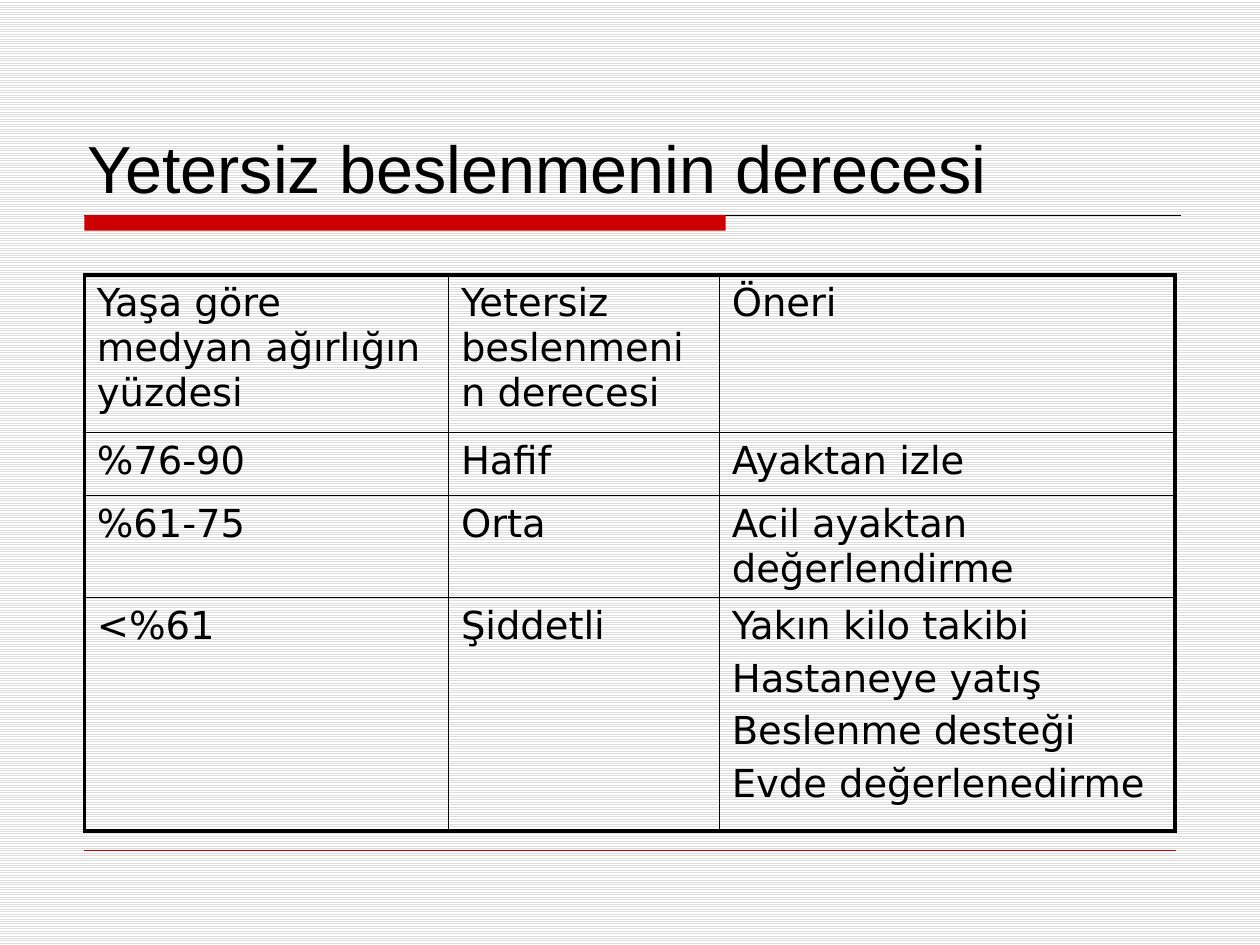
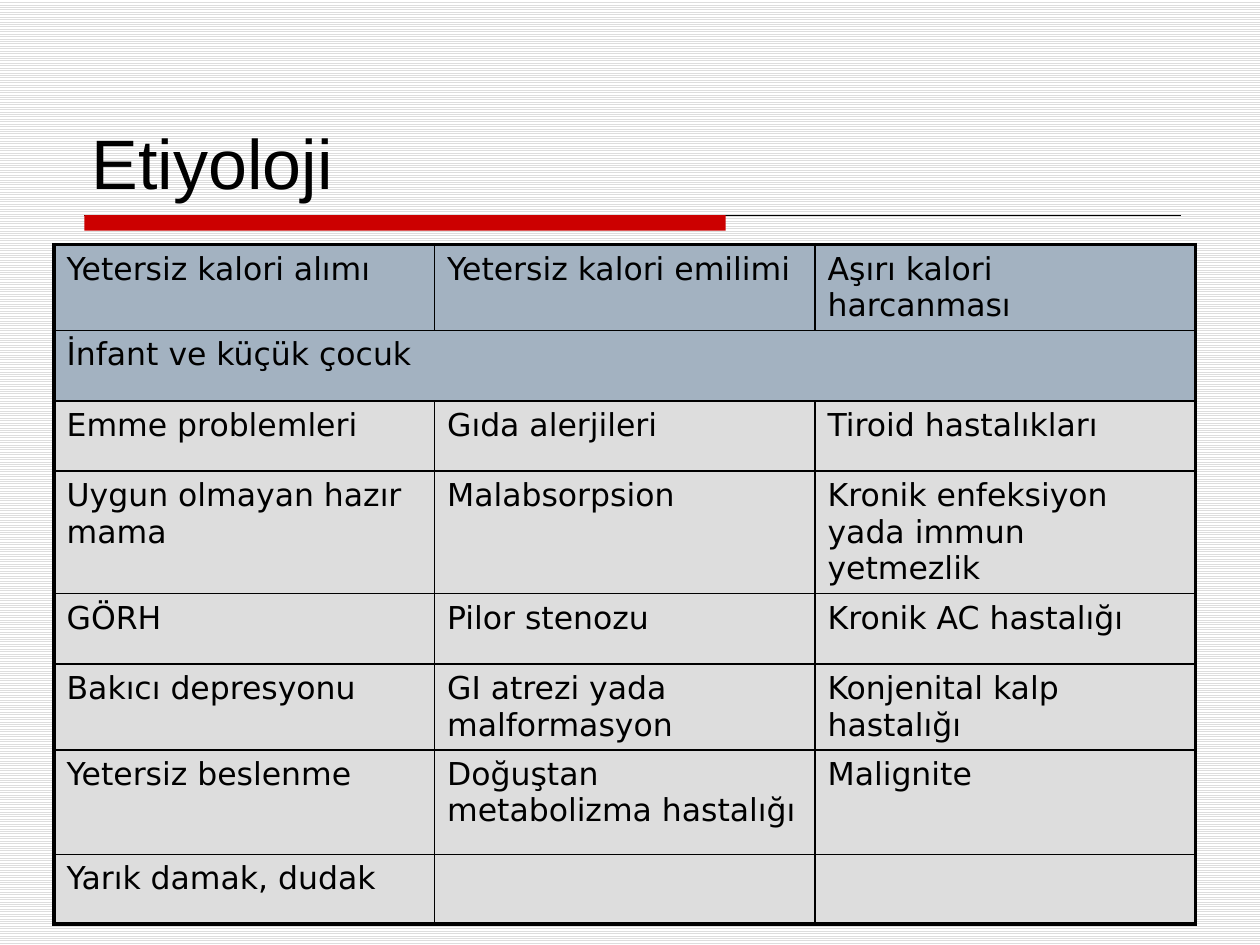
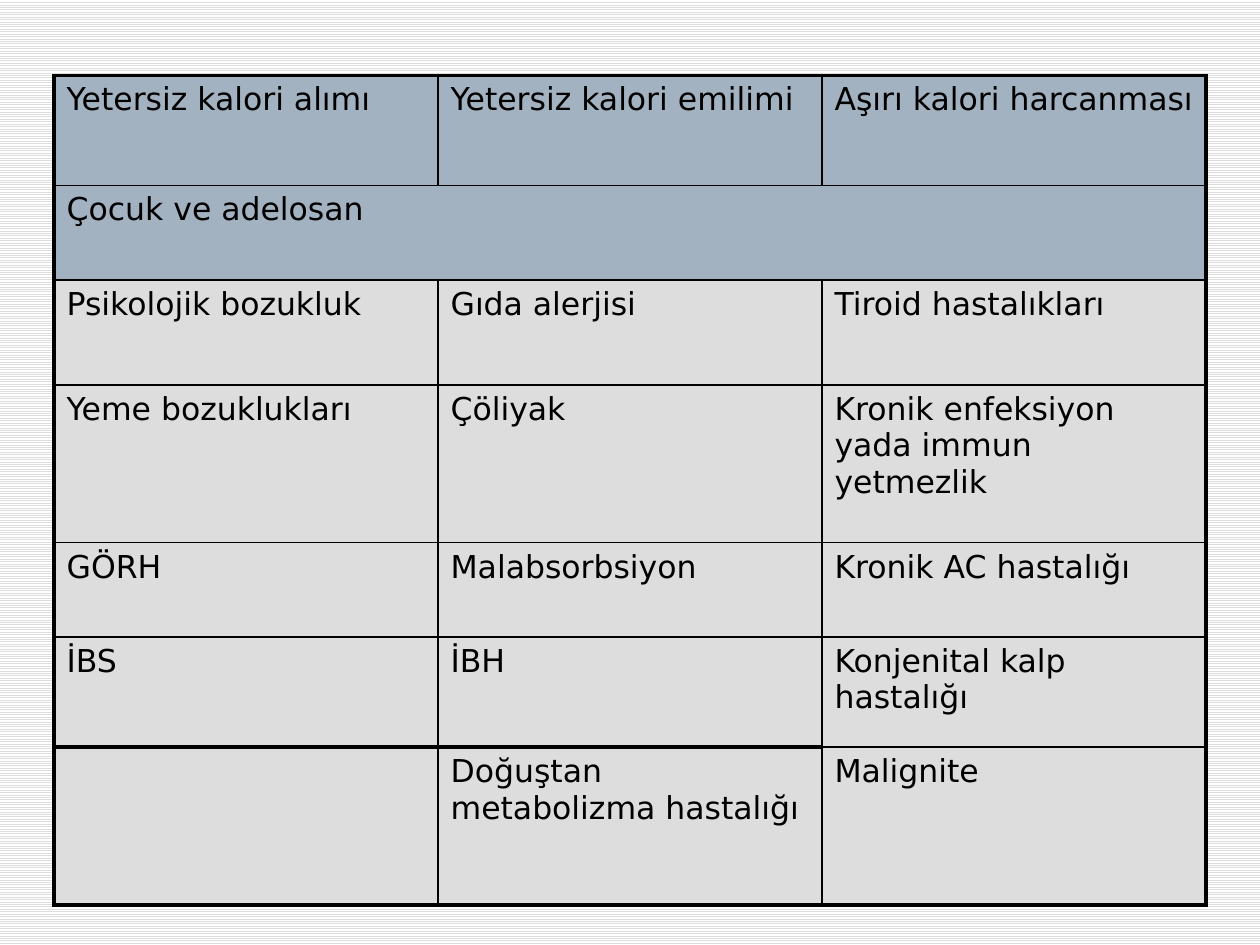
from lxml.etree import SubElement
from pptx import Presentation
from pptx.dml.color import RGBColor
from pptx.enum.dml import MSO_PATTERN
from pptx.enum.shapes import MSO_CONNECTOR, MSO_SHAPE
from pptx.enum.text import MSO_ANCHOR, MSO_AUTO_SIZE, PP_ALIGN
from pptx.oxml.ns import qn
from pptx.util import Cm, Pt

COLORS = {"text": "000000", "accent": "CC0000", "stripe": "DDDDDD", "paper": "FFFFFF",
          "heading": "A3B2C1", "body": "DDDDDD", "border": "000000"}
TITLE_FRAME = {"vertical_anchor": MSO_ANCHOR.BOTTOM, "auto_size": MSO_AUTO_SIZE.NONE,
               "word_wrap": True}
TABLE_FLAGS = {"first_row": False, "horz_banding": False}
THICK, THIN = 2.25, 1

TABLES = [
    {
        "title": "Yetersiz beslenmenin derecesi", "title_at": (1.5, 0.91), "title_size": 38,
        "at": (1.7, 5.54), "size": 22, "heading_rows": 0, "filled": False,
        "columns": [7.34, 5.46, 9.19], "heights": [3.18, 1.27, 1.27, 4.7],
        "heavy_tops": [],
        "rows": [
            ["Yaşa göre medyan ağırlığın yüzdesi", "Yetersiz beslenmenin derecesi", "Öneri"],
            ["%76-90", "Hafif", "Ayaktan izle"],
            ["%61-75", "Orta", "Acil ayaktan değerlendirme"],
            ["<%61", "Şiddetli",
             "Yakın kilo takibi\nHastaneye yatış\nBeslenme desteği\nEvde değerlenedirme"],
        ],
    },
    {
        "title": "Etiyoloji", "title_at": (1.6, 0.84), "title_size": 40,
        "at": (1.09, 4.93), "size": 18, "heading_rows": 2, "filled": True,
        "columns": [7.67] * 3, "heights": [0.51, 1.42, 1.42, 2.46, 1.42, 1.73, 2.11, 1.4],
        "heavy_tops": [],
        "rows": [
            ["Yetersiz kalori alımı", "Yetersiz kalori emilimi", "Aşırı kalori harcanması"],
            ["İnfant ve küçük çocuk"],
            ["Emme problemleri", "Gıda alerjileri", "Tiroid hastalıkları"],
            ["Uygun olmayan hazır mama", "Malabsorpsion",
             "Kronik enfeksiyon yada immun yetmezlik"],
            ["GÖRH", "Pilor stenozu", "Kronik AC hastalığı"],
            ["Bakıcı depresyonu", "GI atrezi yada malformasyon", "Konjenital kalp hastalığı"],
            ["Yetersiz beslenme", "Doğuştan metabolizma hastalığı", "Malignite"],
            ["Yarık damak, dudak", "", ""],
        ],
    },
    {
        "title": None,
        "at": (1.09, 1.52), "size": 18, "heading_rows": 2, "filled": True,
        "columns": [7.74] * 3, "heights": [2.22, 1.9, 2.12, 3.18, 1.9, 2.22, 3.18],
        "heavy_tops": [(6, 0), (6, 1)],
        "rows": [
            ["Yetersiz kalori alımı", "Yetersiz kalori emilimi", "Aşırı kalori harcanması"],
            ["Çocuk ve adelosan"],
            ["Psikolojik bozukluk", "Gıda alerjisi", "Tiroid hastalıkları"],
            ["Yeme bozuklukları", "Çöliyak", "Kronik enfeksiyon yada immun yetmezlik"],
            ["GÖRH", "Malabsorbsiyon", "Kronik AC hastalığı"],
            ["İBS", "İBH", "Konjenital kalp hastalığı"],
            ["", "Doğuştan metabolizma hastalığı", "Malignite"],
        ],
    },
]


def write(para, text, font_name, size):
    span = para.add_run()
    span.text = text
    for name, value in {"name": font_name, "size": Pt(size), "bold": False}.items():
        setattr(span.font, name, value)
    span.font.color.rgb = RGBColor.from_string(COLORS["text"])


def set_borders(cell, widths):
    properties = cell._tc.get_or_add_tcPr()
    for side, width in widths.items():
        line = SubElement(properties, qn(f"a:ln{side}"), w=str(Pt(width)))
        fill = SubElement(line, qn("a:solidFill"))
        SubElement(fill, qn("a:srgbClr"), val=COLORS["border"])


deck = Presentation()
deck.slide_width, deck.slide_height = Cm(25.4), Cm(19.05)
master = deck.slide_master
title_only, blank = deck.slide_layouts[5], deck.slide_layouts[6]

# Striped background on the master
background = master.background.fill
background.patterned()
background.pattern = MSO_PATTERN.LIGHT_HORIZONTAL
background.fore_color.rgb = RGBColor.from_string(COLORS["stripe"])
background.back_color.rgb = RGBColor.from_string(COLORS["paper"])

# Title rule, red band and footer rule, drawn once and moved to the master
pages = [deck.slides.add_slide(title_only if spec_["title"] else blank) for spec_ in TABLES]
shapes = pages[0].shapes
decorations = []
for left, right, top, color, width in [(1.7, 23.8, 4.34, "text", 0.75),
                                       (1.7, 23.7, 17.15, "accent", 0.25)]:
    rule = shapes.add_connector(MSO_CONNECTOR.STRAIGHT, Cm(left), Cm(top), Cm(right), Cm(top))
    rule.line.color.rgb = RGBColor.from_string(COLORS[color])
    rule.line.width = Pt(width)
    SubElement(rule.element.spPr, qn("a:effectLst"))
    decorations.append(rule)
band = shapes.add_shape(MSO_SHAPE.RECTANGLE, Cm(1.7), Cm(4.34), Cm(12.93), Cm(0.31))
band.shadow.inherit = False
band.fill.solid()
band.fill.fore_color.rgb = RGBColor.from_string(COLORS["accent"])
band.line.fill.background()
decorations.append(band)
for number, shape in enumerate(decorations, start=101):
    shape.element.xpath(".//p:cNvPr")[0].set("id", str(number))
    master.shapes.element.append(shape.element)

for page, content in zip(pages, TABLES):
    # Title
    if content["title"]:
        title = page.shapes.title
        title.left, title.top = [Cm(value) for value in content["title_at"]]
        title.width, title.height = Cm(22.23), Cm(3.38)
        for name, value in TITLE_FRAME.items():
            setattr(title.text_frame, name, value)
        para = title.text_frame.paragraphs[0]
        para.alignment = PP_ALIGN.LEFT
        write(para, content["title"], "Arial", content["title_size"])

    # Table grid
    rows, columns, heights = content["rows"], content["columns"], content["heights"]
    left, top = content["at"]
    table = page.shapes.add_table(len(rows), len(columns), Cm(left), Cm(top),
                                  Cm(sum(columns)), Cm(sum(heights))).table
    for name, value in TABLE_FLAGS.items():
        setattr(table, name, value)
    for column, width in zip(table.columns, columns):
        column.width = Cm(width)
    for row, height in zip(table.rows, heights):
        row.height = Cm(height)

    # Cells: a row with a single text spans the whole table
    last_row, last_column = len(rows) - 1, len(columns) - 1
    heavy_tops = content["heavy_tops"]
    for r, texts in enumerate(rows):
        if len(texts) == 1:
            table.cell(r, 0).merge(table.cell(r, last_column))
        for c, text in enumerate(texts):
            cell = table.cell(r, c)
            right_end = c == last_column or cell.is_merge_origin
            heavy = {"L": c == 0, "R": right_end,
                     "T": r == 0 or (r, c) in heavy_tops,
                     "B": r == last_row or (r + 1, c) in heavy_tops}
            set_borders(cell, {side: THICK if on else THIN for side, on in heavy.items()})
            if content["filled"]:
                cell.fill.solid()
                role = "heading" if r < content["heading_rows"] else "body"
                cell.fill.fore_color.rgb = RGBColor.from_string(COLORS[role])
            else:
                cell.fill.background()
            for i, line_text in enumerate(text.split("\n") if text else []):
                frame = cell.text_frame
                para = frame.add_paragraph() if i else frame.paragraphs[0]
                para.space_before = Pt(content["size"] * 0.2)
                write(para, line_text, "DejaVu Sans", content["size"])

deck.save("out.pptx")
